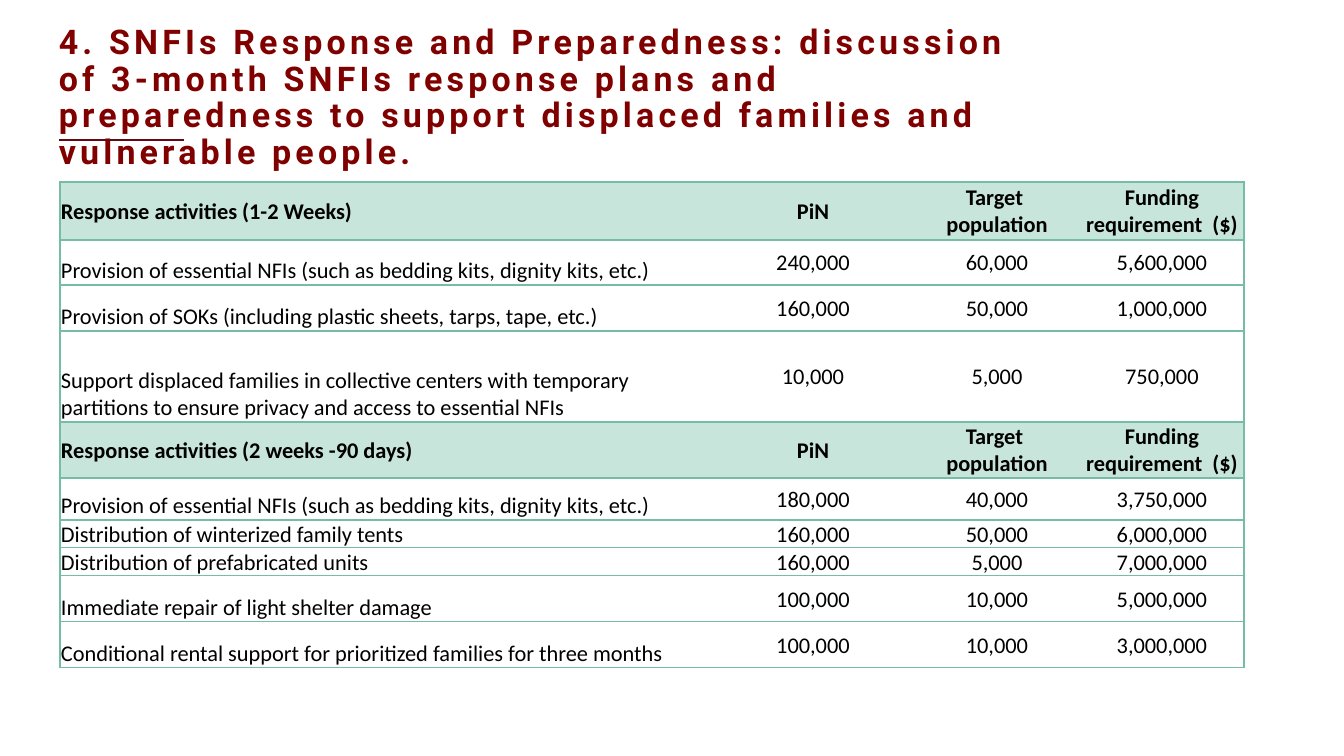
from lxml import etree
from pptx import Presentation
from pptx import util as u
from pptx.dml.color import RGBColor
from pptx.enum import shapes, text
from pptx.oxml.ns import qn

TITLE = ("4. SNFIs Response and Preparedness: discussion of 3-month SNFIs response plans "
         "and preparedness to support displaced families and vulnerable people.")
MEASURES = ("PiN", "Target  population", "Funding requirement  ($)")
# Each phase: heading, heading row height, then (activity, row height, figures)
PHASES = [
    ("Response activities (1-2 Weeks)", 58, [
        ("Provision of essential NFIs (such as bedding kits, dignity kits, etc.)", 45,
         ("240,000", "60,000", "5,600,000")),
        ("Provision of SOKs (including plastic sheets, tarps, tape, etc.)", 46,
         ("160,000", "50,000", "1,000,000")),
        ("Support displaced families in collective centers with temporary partitions "
         "to ensure privacy and access to essential NFIs", 91,
         ("10,000", "5,000", "750,000")),
    ]),
    ("Response activities (2 weeks -90 days)", 56, [
        ("Provision of essential NFIs (such as bedding kits, dignity kits, etc.)", 42,
         ("180,000", "40,000", "3,750,000")),
        ("Distribution of winterized family tents", 28, ("160,000", "50,000", "6,000,000")),
        ("Distribution of prefabricated units", 28, ("160,000", "5,000", "7,000,000")),
        ("Immediate repair of light shelter damage", 46, ("100,000", "10,000", "5,000,000")),
        ("Conditional rental support for prioritized families for three months", 46,
         ("100,000", "10,000", "3,000,000")),
    ]),
]
COLUMNS = (652, 202, 166, 164)
COLORS = {"title": "800000", "accent": "640811", "border": "75BDA7",
          "heading": "C8E5DC", "row": "FFFFFF", "text": "000000"}
TITLE_FONT = {"name": "Roboto", "size": u.Pt(24.3), "bold": True}
CELL_FONT = {"name": "Calibri", "size": u.Pt(16)}
TITLE_FRAME = {"word_wrap": True, "vertical_anchor": text.MSO_ANCHOR.TOP,
               "margin_left": u.Inches(0.1), "margin_right": u.Inches(0.1),
               "margin_top": u.Inches(0.05), "margin_bottom": u.Inches(0.05)}


def px(length):
    return u.Emu(round(length * 914400 / 100.8))


def apply(target, values):
    for key, value in values.items():
        setattr(target, key, value)


def set_font(font, values, color):
    apply(font, values)
    font.color.rgb = RGBColor.from_string(COLORS[color])


def set_borders(cell, visible):
    """Draw the sides named in visible and clear the others; call before filling."""
    properties = cell._tc.get_or_add_tcPr()
    for side in "LRTB":
        line = etree.SubElement(properties, qn(f"a:ln{side}"), w=str(u.Pt(1)))
        if side in visible:
            fill = etree.SubElement(line, qn("a:solidFill"))
            etree.SubElement(fill, qn("a:srgbClr"), val=COLORS["border"])
        else:
            etree.SubElement(line, qn("a:noFill"))


def add_title(slide):
    frame = slide.shapes.add_textbox(px(49), px(20), px(975), px(106)).text_frame
    apply(frame, TITLE_FRAME)
    heading = frame.paragraphs[0]
    heading.line_spacing = 0.9
    run = heading.add_run()
    run.text = TITLE
    set_font(run.font, TITLE_FONT, "title")
    run._r.get_or_add_rPr().set("spc", "300")


def add_rule(slide):
    rule = slide.shapes.add_connector(shapes.MSO_CONNECTOR.STRAIGHT,
                                      px(59), px(140), px(184), px(140))
    rule.line.width = u.Pt(1)
    rule.line.color.rgb = RGBColor.from_string(COLORS["accent"])
    etree.SubElement(rule._element.spPr, qn("a:effectLst"))


def add_plan(slide):
    rows = []
    for heading, height, activities in PHASES:
        rows.append((True, height, (heading, *MEASURES)))
        rows += [(False, tall, (name, *figures)) for name, tall, figures in activities]

    plan = slide.shapes.add_table(len(rows), len(COLUMNS), px(60), px(182), px(sum(COLUMNS)),
                                  px(sum(height for _, height, _ in rows))).table
    plan.first_row = plan.horz_banding = False
    for column, width in zip(plan.columns, COLUMNS):
        column.width = px(width)
    last = len(COLUMNS) - 1
    for r, (is_heading, height, entries) in enumerate(rows):
        plan.rows[r].height = px(height)
        for c, entry in enumerate(entries):
            cell = plan.cell(r, c)
            low = c == 0 and not is_heading
            apply(cell, {
                "margin_left": px(1), "margin_right": px(1), "margin_top": px(1),
                "margin_bottom": 0,
                "vertical_anchor": text.MSO_ANCHOR.BOTTOM if low else text.MSO_ANCHOR.MIDDLE})
            set_borders(cell, "TB" + ("L" if c == 0 else "R" if c == last else ""))
            cell.fill.solid()
            cell.fill.fore_color.rgb = RGBColor.from_string(
                COLORS["heading" if is_heading else "row"])
            paragraph = cell.text_frame.paragraphs[0]
            paragraph.alignment = text.PP_ALIGN.CENTER if c else text.PP_ALIGN.LEFT
            run = paragraph.add_run()
            run.text = entry
            set_font(run.font, {**CELL_FONT, "bold": is_heading}, "text")


def main():
    deck = Presentation()
    deck.slide_width, deck.slide_height = px(1344), px(756)
    slide = deck.slides.add_slide(deck.slide_layouts[6])
    add_title(slide)
    add_rule(slide)
    add_plan(slide)
    deck.save("out.pptx")


if __name__ == "__main__":
    main()
